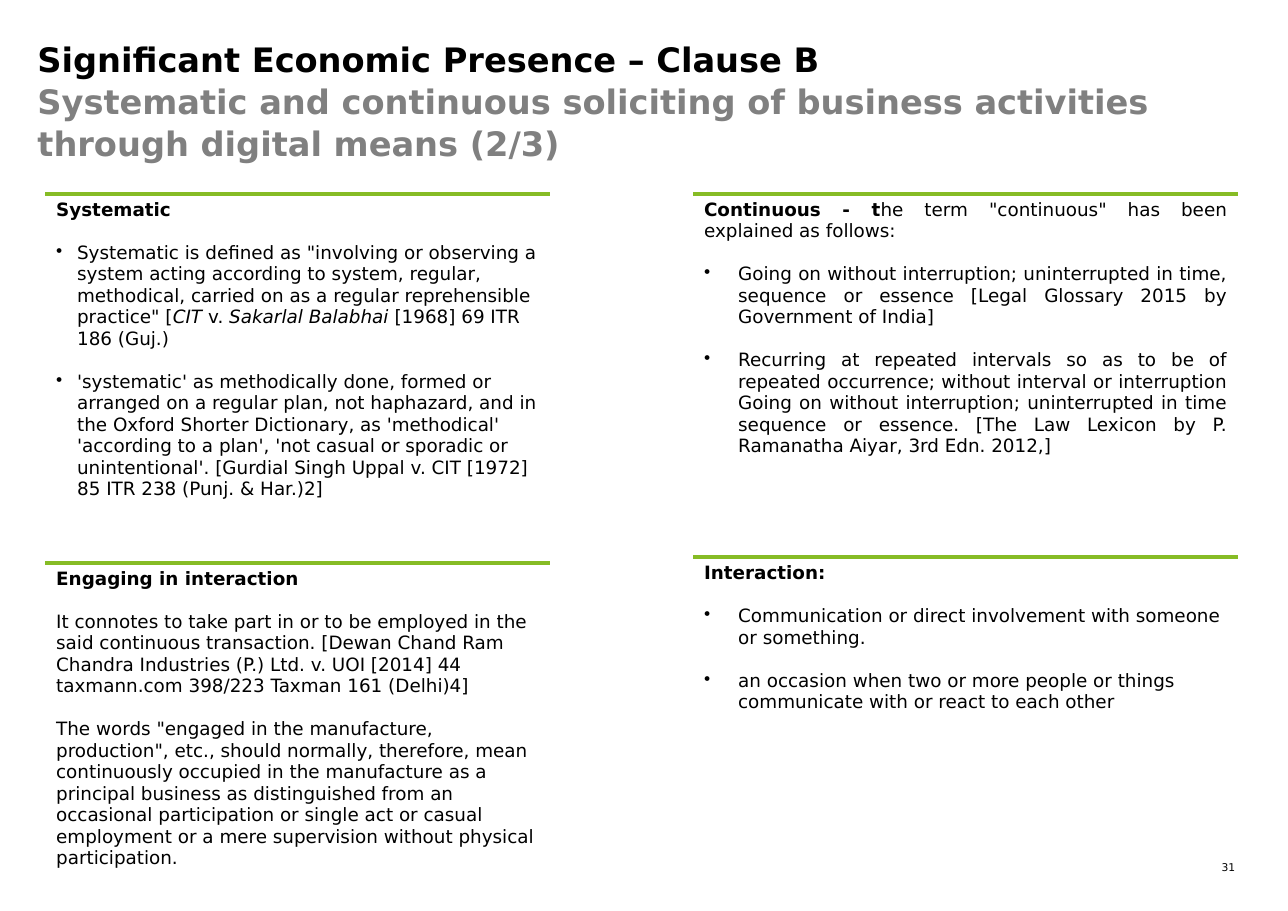
from lxml.etree import SubElement
from pptx import Presentation
from pptx.dml.color import RGBColor
from pptx.enum.text import MSO_ANCHOR, MSO_AUTO_SIZE, PP_ALIGN
from pptx.oxml import parse_xml
from pptx.oxml.ns import nsdecls, qn
from pptx.util import Inches, Pt

COLOURS = {"text": "000000", "subtitle": "808080", "rule": "86BC25"}
FONT = "DejaVu Sans"
BODY_SIZE = 12
BLANK_LINE = 14

SYSTEMATIC = [
    [("Systematic is defined as \"involving or observing a system acting according to system, "
      "regular, methodical, carried on as a regular reprehensible practice\" [", ""),
     ("CIT ", "italic"), ("v. ", ""), ("Sakarlal Balabhai ", "italic"),
     ("[1968] 69 ITR 186 (Guj.)", "")],
    [("'systematic' as methodically done, formed or arranged on a regular plan, not haphazard, "
      "and in the Oxford Shorter Dictionary, as 'methodical' 'according to a plan', 'not casual "
      "or sporadic or unintentional'. [Gurdial Singh Uppal v. CIT [1972] 85 ITR 238 "
      "(Punj. & Har.)2]", "")],
]
ENGAGING = [
    [("It connotes to take part in or to be employed in the said continuous transaction. "
      "[Dewan Chand Ram Chandra Industries (P.) Ltd. v. UOI [2014] 44 taxmann.com 398/223 "
      "Taxman 161 (Delhi)4]", "")],
    [("The words \"engaged in the manufacture, production\", etc., should normally, therefore, "
      "mean continuously occupied in the manufacture as a principal business as distinguished "
      "from an occasional participation or single act or casual employment or a mere "
      "supervision without physical participation.", "")],
]
CONTINUOUS = [
    [("Going on without interruption; uninterrupted in time, sequence or essence [Legal "
      "Glossary 2015 by Government of India]", "")],
    [("Recurring at repeated intervals so as to be of repeated occurrence; without interval or "
      "interruption Going on without interruption; uninterrupted in time sequence or essence. "
      "[The Law Lexicon by P. Ramanatha Aiyar, 3rd Edn. 2012,]", "")],
]
INTERACTION = [
    [("Communication or direct involvement with someone or something.", "")],
    [("an occasion when two or more people or things communicate with or react to each other",
      "")],
]

LEFT, RIGHT = (0.41, 4.58), (6.29, 4.95)
PANELS = [
    ((LEFT[0], 1.76, LEFT[1], 2.9), [("Systematic", "bold")], SYSTEMATIC, 0.19, PP_ALIGN.LEFT),
    ((LEFT[0], 5.11, LEFT[1], 2.9), [("Engaging in interaction", "bold")], ENGAGING, 0,
     PP_ALIGN.LEFT),
    ((RIGHT[0], 1.76, RIGHT[1], 2.61),
     [("Continuous - t", "bold"),
      ("he term \"continuous\" has been explained as follows:", "")],
     CONTINUOUS, 0.31, PP_ALIGN.JUSTIFY),
    ((RIGHT[0], 5.06, RIGHT[1], 2.92), [("Interaction:", "bold")], INTERACTION, 0.31,
     PP_ALIGN.LEFT),
]


def colour(name):
    return RGBColor.from_string(COLOURS[name])


def set_font(font, size, name="text"):
    font.name = FONT
    font.size = Pt(size)
    font.color.rgb = colour(name)


def clear_margins(frame):
    frame.margin_left = frame.margin_right = frame.margin_top = frame.margin_bottom = 0


def fill_paragraph(para, spans, indent, align):
    para.alignment = align
    if indent:
        properties = para._p.get_or_add_pPr()
        properties.set("marL", str(Inches(indent)))
        properties.set("indent", str(-Inches(indent)))
        SubElement(properties, qn("a:buChar"), char="•")
    set_font(para.font, BODY_SIZE)
    for text, style in spans:
        span = para.add_run()
        span.text = text
        span.font.bold = style == "bold"
        span.font.italic = style == "italic"


def set_borders(cell):
    green = f'<a:solidFill><a:srgbClr val="{COLOURS["rule"]}"/></a:solidFill>'
    properties = cell._tc.get_or_add_tcPr()
    for position, side in enumerate("LRTB"):
        width, line = (Pt(3), green) if side == "T" else (0, "<a:noFill/>")
        properties.insert(position, parse_xml(
            f'<a:ln{side} {nsdecls("a")} w="{width}">{line}</a:ln{side}>'))


def add_panel(page, box, heading, items, indent, align):
    table = page.shapes.add_table(1, 1, *map(Inches, box)).table
    table.first_row = table.horz_banding = False
    cell = table.cell(0, 0)
    cell.fill.background()
    set_borders(cell)
    frame = cell.text_frame
    fill_paragraph(frame.paragraphs[0], heading, 0, align)
    for spans in items:
        para = frame.add_paragraph()
        para.space_before = Pt(BLANK_LINE)
        fill_paragraph(para, spans, indent, align)


def set_title(page, box):
    title = page.shapes.title
    title.left, title.top, title.width, title.height = map(Inches, box)
    frame = title.text_frame
    clear_margins(frame)
    frame.word_wrap = True
    frame.auto_size = MSO_AUTO_SIZE.NONE
    frame.vertical_anchor = MSO_ANCHOR.TOP
    para = frame.paragraphs[0]
    para.alignment = PP_ALIGN.LEFT
    para.line_spacing = 1.04
    para.space_before = Pt(0)
    set_font(para.font, 22)
    para.font.bold = True
    para.add_run().text = "Significant Economic Presence – Clause B"
    para.add_line_break()
    span = para.add_run()
    span.text = ("Systematic and continuous soliciting of business activities "
                 "through digital means (2/3)")
    span.font.color.rgb = colour("subtitle")


def add_page_number(page, box):
    frame = page.shapes.add_textbox(*map(Inches, box)).text_frame
    clear_margins(frame)
    frame.word_wrap = True
    para = frame.paragraphs[0]
    para.alignment = PP_ALIGN.RIGHT
    set_font(para.font, 7)
    para.add_run().text = "31"


def main():
    deck = Presentation()
    deck.slide_width, deck.slide_height = Inches(11.69), Inches(8.27)
    page = deck.slides.add_slide(deck.slide_layouts[5])
    set_title(page, (0.34, 0.34, 10.9, 0.79))
    for panel in PANELS:
        add_panel(page, *panel)
    add_page_number(page, (10.91, 7.81, 0.3, 0.12))
    deck.save("out.pptx")


if __name__ == "__main__":
    main()
